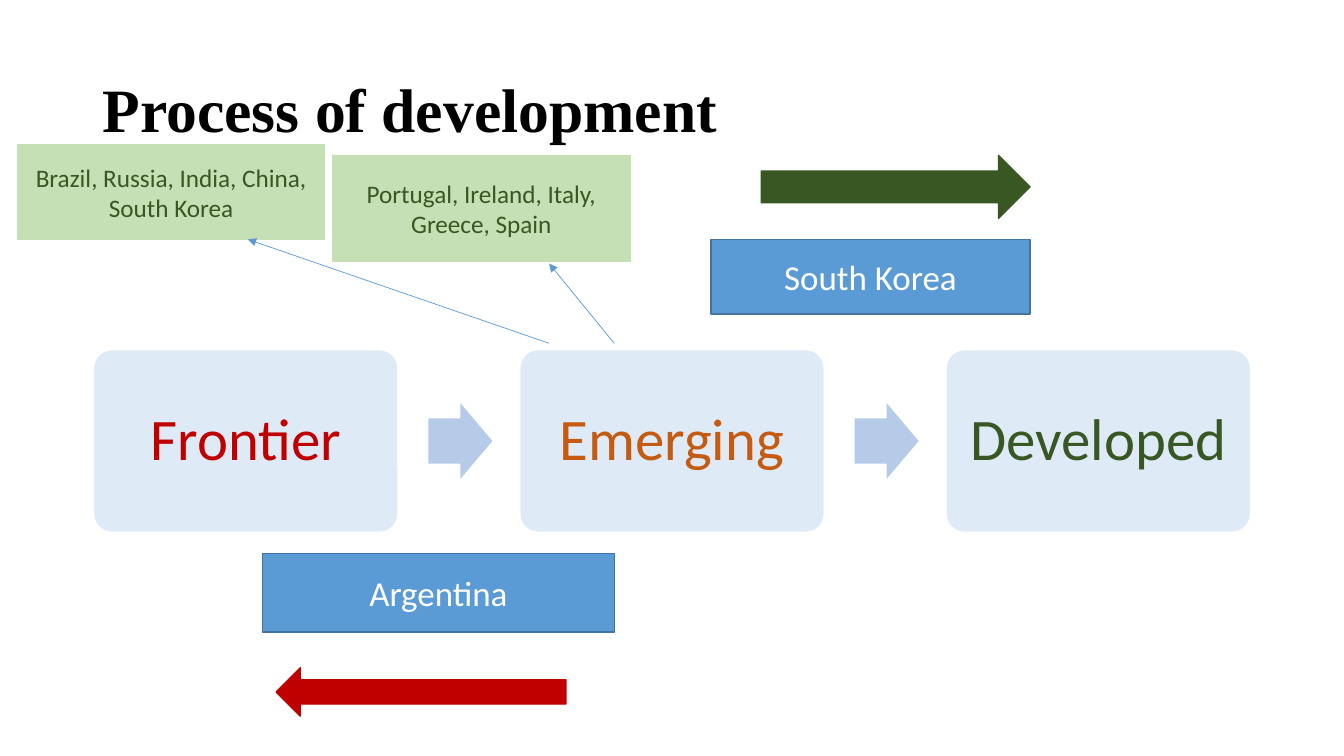
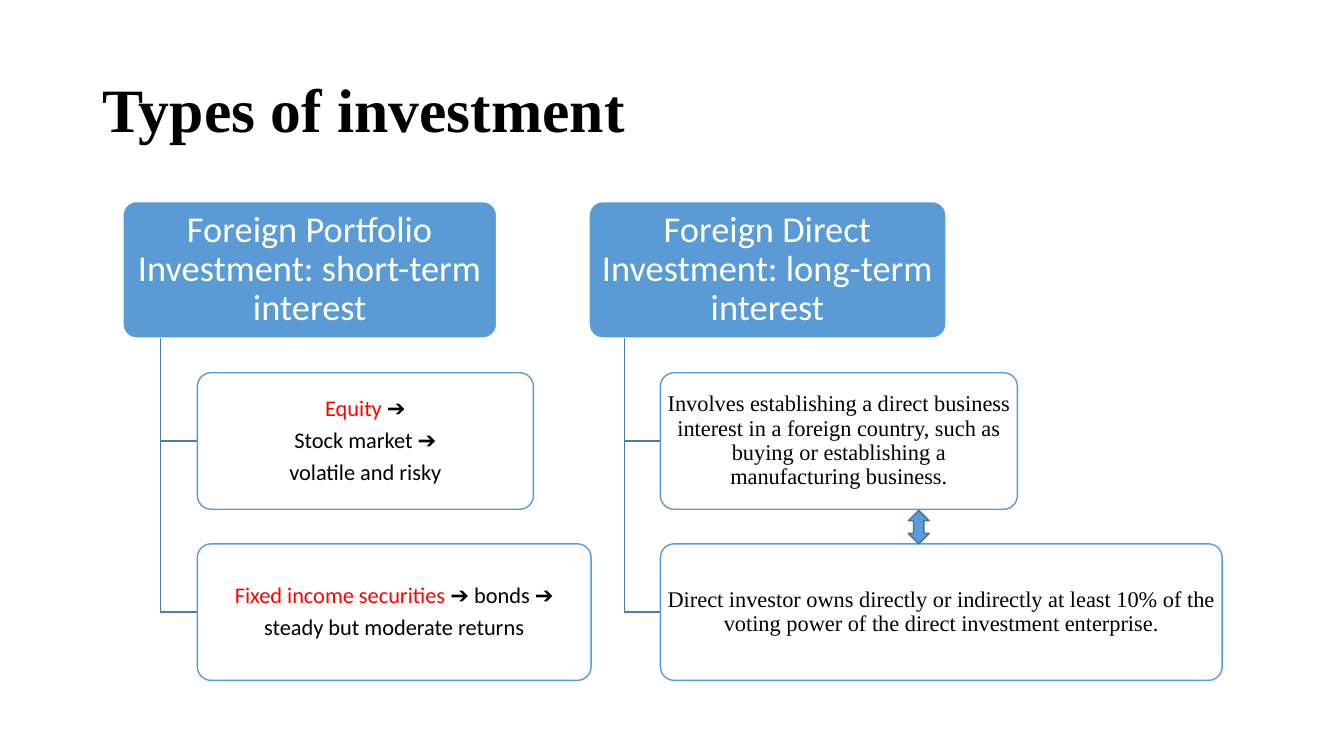
from dataclasses import dataclass
from typing import Optional

from lxml.etree import SubElement
from pptx import Presentation
from pptx.dml.color import RGBColor
from pptx.enum.shapes import MSO_CONNECTOR, MSO_SHAPE
from pptx.enum.text import MSO_ANCHOR, MSO_AUTO_SIZE, PP_ALIGN
from pptx.oxml.ns import qn
from pptx.util import Emu, Pt

EMU_PER_PX = 9525
PAGE_WIDTH, PAGE_HEIGHT = 1280, 720

SANS = "Calibri"
SERIF = "Times New Roman"

BLACK = RGBColor(0x00, 0x00, 0x00)
WHITE = RGBColor(0xFF, 0xFF, 0xFF)
RED = RGBColor(0xFF, 0x00, 0x00)
DARK_RED = RGBColor(0xC0, 0x00, 0x00)
ORANGE = RGBColor(0xC5, 0x5A, 0x11)
DARK_GREEN = RGBColor(0x38, 0x57, 0x23)
PALE_GREEN = RGBColor(0xC5, 0xE0, 0xB4)
BLUE = RGBColor(0x5B, 0x9B, 0xD5)
EDGE_BLUE = RGBColor(0x43, 0x73, 0x9E)
SPINE_BLUE = RGBColor(0x49, 0x7C, 0xAB)
PALE_BLUE = RGBColor(0xDE, 0xEB, 0xF7)
ARROW_BLUE = RGBColor(0xB5, 0xCB, 0xE7)


@dataclass(frozen=True)
class Box:
    left: int
    top: int
    width: int
    height: int


@dataclass(frozen=True)
class Span:
    text: str
    color: RGBColor = BLACK


@dataclass(frozen=True)
class Label:
    text: str
    box: Box
    fill: RGBColor
    line: RGBColor
    color: RGBColor
    size: int


@dataclass(frozen=True)
class Card:
    width: int
    paragraphs: list[list[Span]]


@dataclass(frozen=True)
class Branch:
    heading: str
    left: int
    width: int
    font: str
    cards: list[Card]


STAGES = [Span("Frontier", DARK_RED), Span("Emerging", ORANGE), Span("Developed", DARK_GREEN)]
STAGE_LEFT, STAGE_TOP, STAGE_WIDTH, STAGE_HEIGHT, STAGE_STEP = 89, 333, 290, 174, 406

LABELS = [
    Label("South Korea", Box(677, 228, 304, 71), BLUE, EDGE_BLUE, WHITE, 25),
    Label("Argentina", Box(250, 527, 335, 75), BLUE, EDGE_BLUE, WHITE, 25),
    Label("Brazil, Russia, India, China, South Korea", Box(17, 138, 292, 90),
          PALE_GREEN, PALE_GREEN, DARK_GREEN, 18),
    Label("Portugal, Ireland, Italy, Greece, Spain", Box(317, 148, 283, 101),
          PALE_GREEN, PALE_GREEN, DARK_GREEN, 18),
]

BRANCH_TOP, BRANCH_HEIGHT, BRANCH_STEP = 192, 130, 163
BRANCHES = [
    Branch("Foreign Portfolio Investment: short-term interest", 117, 356, SANS, [
        Card(320, [[Span("Equity ", RED), Span("➔")],
                   [Span("Stock market ➔")],
                   [Span("volatile and risky")]]),
        Card(375, [[Span("Fixed income securities ", RED), Span("➔ bonds ➔")],
                   [Span("steady but moderate returns")]]),
    ]),
    Branch("Foreign Direct Investment: long-term interest", 561, 340, SERIF, [
        Card(340, [[Span("Involves establishing a direct business interest in a foreign "
                         "country, such as buying or establishing a manufacturing business.")]]),
        Card(535, [[Span("Direct investor owns directly or indirectly at least 10% of "
                         "the voting power of the direct investment enterprise.")]]),
    ]),
]


def px(length: int) -> Emu:
    return Emu(length * EMU_PER_PX)


def place(shape, box: Box) -> None:
    shape.left, shape.top = px(box.left), px(box.top)
    shape.width, shape.height = px(box.width), px(box.height)


def write_text(frame, paragraphs: list[list[Span]], *, size: int, font: str = SANS,
               bold: bool = False, align=PP_ALIGN.CENTER, line_spacing: float = 0.9,
               space_after: float = 0, inset: Optional[int] = None) -> None:
    frame.word_wrap = True
    frame.auto_size = MSO_AUTO_SIZE.NONE
    frame.vertical_anchor = MSO_ANCHOR.MIDDLE
    if inset is not None:
        frame.margin_left = frame.margin_right = px(inset)
        frame.margin_top = frame.margin_bottom = px(inset)
    for index, spans in enumerate(paragraphs):
        para = frame.add_paragraph() if index else frame.paragraphs[0]
        para.alignment = align
        para.line_spacing = line_spacing
        para.space_before = Pt(0)
        para.space_after = Pt(space_after)
        for span in spans:
            run = para.add_run()
            run.text = span.text
            run.font.name = font
            run.font.size = Pt(size)
            run.font.bold = bold
            run.font.color.rgb = span.color


def add_box(page, kind, box: Box, fill: RGBColor, line: Optional[RGBColor] = None,
            adjustments: tuple[float, ...] = ()):
    shape = page.shapes.add_shape(kind, px(box.left), px(box.top), px(box.width), px(box.height))
    shape.shadow.inherit = False
    shape.fill.solid()
    shape.fill.fore_color.rgb = fill
    if line is None:
        shape.line.fill.background()
    else:
        shape.line.color.rgb = line
        shape.line.width = Pt(1)
    for index, value in enumerate(adjustments):
        shape.adjustments[index] = value
    return shape


def add_pointer(page, start: tuple[int, int], end: tuple[int, int]) -> None:
    pointer = page.shapes.add_connector(MSO_CONNECTOR.STRAIGHT, *map(px, start + end))
    pointer.line.color.rgb = BLUE
    pointer.line.width = Pt(0.5)
    SubElement(pointer.line._get_or_add_ln(), qn("a:tailEnd"), type="triangle")
    SubElement(pointer._element.spPr, qn("a:effectLst"))


def add_elbow(page, left: int, top: int, right: int, bottom: int) -> None:
    builder = page.shapes.build_freeform(left, top, scale=EMU_PER_PX)
    builder.add_line_segments([(left, bottom), (right, bottom)], close=False)
    elbow = builder.convert_to_shape()
    elbow.shadow.inherit = False
    elbow.fill.background()
    elbow.line.color.rgb = SPINE_BLUE
    elbow.line.width = Pt(1)


def add_page(deck, title: str):
    page = deck.slides.add_slide(deck.slide_layouts[5])
    place(page.shapes.title, Box(88, 38, 1104, 139))
    write_text(page.shapes.title.text_frame, [[Span(title)]], size=44, font=SERIF,
               bold=True, align=PP_ALIGN.LEFT)
    return page


def add_process_page(deck) -> None:
    page = add_page(deck, "Process of development")
    for index, stage in enumerate(STAGES):
        left = STAGE_LEFT + index * STAGE_STEP
        box = Box(left, STAGE_TOP, STAGE_WIDTH, STAGE_HEIGHT)
        shape = add_box(page, MSO_SHAPE.ROUNDED_RECTANGLE, box, PALE_BLUE, WHITE, (0.1,))
        write_text(shape.text_frame, [[stage]], size=42, inset=12)
        if index < len(STAGES) - 1:
            add_box(page, MSO_SHAPE.RIGHT_ARROW, Box(left + 319, 384, 61, 72),
                    ARROW_BLUE, adjustments=(0.6, 0.5))
    for label in LABELS:
        shape = add_box(page, MSO_SHAPE.RECTANGLE, label.box, label.fill, label.line)
        write_text(shape.text_frame, [[Span(label.text, label.color)]],
                   size=label.size, line_spacing=1.0)
    add_box(page, MSO_SHAPE.RIGHT_ARROW, Box(725, 148, 256, 60), DARK_GREEN, DARK_GREEN)
    add_box(page, MSO_SHAPE.LEFT_ARROW, Box(263, 636, 276, 46), DARK_RED, DARK_RED)
    add_pointer(page, (523, 327), (236, 228))
    add_pointer(page, (585, 327), (523, 251))


def add_branch(page, branch: Branch) -> None:
    heading_box = Box(branch.left, BRANCH_TOP, branch.width, BRANCH_HEIGHT)
    heading = add_box(page, MSO_SHAPE.ROUNDED_RECTANGLE, heading_box, BLUE, WHITE, (0.1,))
    write_text(heading.text_frame, [[Span(branch.heading, WHITE)]], size=26, inset=4)
    spine_left = branch.left + round(branch.width / 10)
    card_left = branch.left + round(branch.width / 5)
    for row, card in enumerate(branch.cards, start=1):
        top = BRANCH_TOP + row * BRANCH_STEP
        add_elbow(page, spine_left, BRANCH_TOP + BRANCH_HEIGHT, card_left,
                  top + BRANCH_HEIGHT // 2)
        shape = add_box(page, MSO_SHAPE.ROUNDED_RECTANGLE,
                        Box(card_left, top, card.width, BRANCH_HEIGHT), WHITE, BLUE, (0.1,))
        write_text(shape.text_frame, card.paragraphs, size=16, font=branch.font,
                   space_after=5.6, inset=3)


def add_investment_page(deck) -> None:
    page = add_page(deck, "Types of investment")
    for branch in BRANCHES:
        add_branch(page, branch)
    add_box(page, MSO_SHAPE.UP_DOWN_ARROW, Box(865, 486, 20, 32), BLUE, EDGE_BLUE)


def main() -> None:
    deck = Presentation()
    deck.slide_width, deck.slide_height = px(PAGE_WIDTH), px(PAGE_HEIGHT)
    add_process_page(deck)
    add_investment_page(deck)
    deck.save("out.pptx")


if __name__ == "__main__":
    main()
